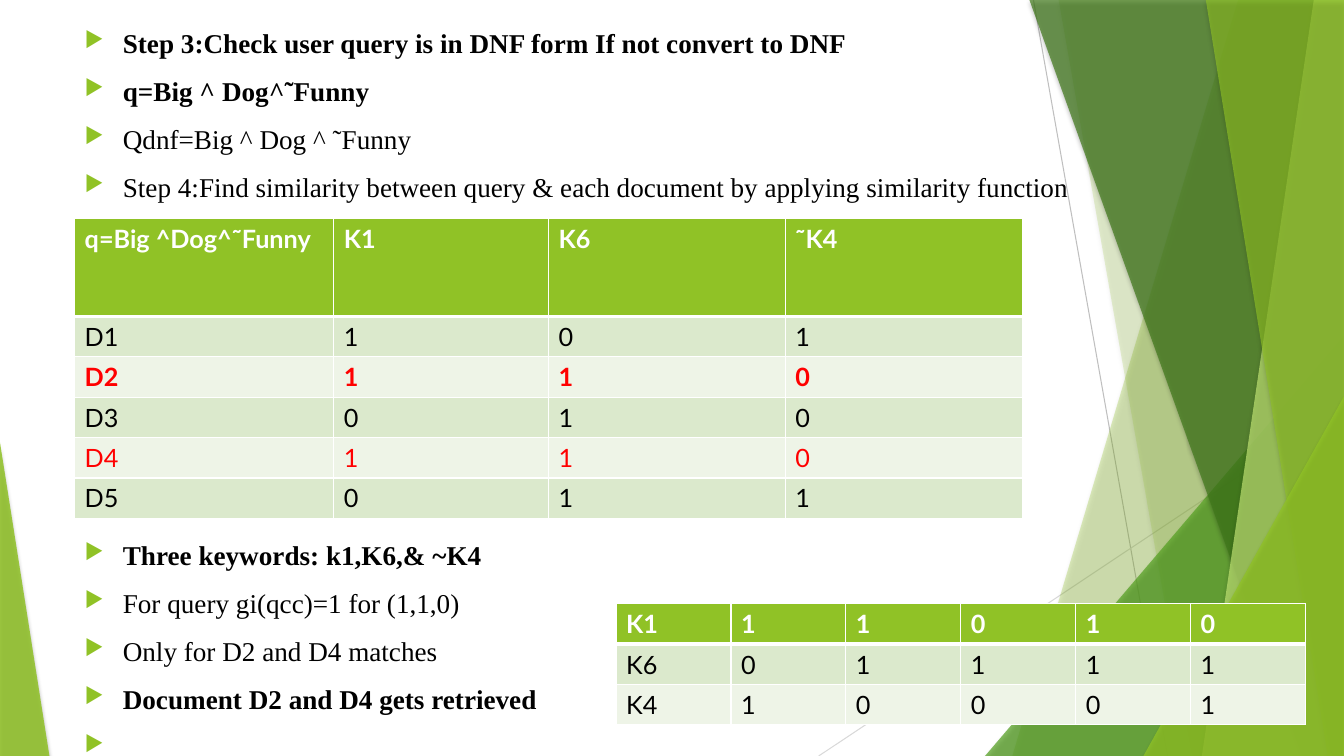
from dataclasses import dataclass

from lxml.etree import SubElement
from pptx import Presentation
from pptx.dml.color import RGBColor as Color
from pptx.enum.shapes import MSO_CONNECTOR as Connector, MSO_SHAPE as Preset
from pptx.oxml import parse_xml
from pptx.oxml.ns import nsdecls, qn
from pptx.util import Inches, Pt


@dataclass(frozen=True)
class Theme:
    lime: str = "90C226"
    green: str = "54A021"
    forest: str = "3F7819"
    pale: str = "C0E474"
    band_dark: str = "DBE9CC"
    band_light: str = "EEF4E7"
    white: str = "FFFFFF"
    black: str = "000000"
    red: str = "FF0000"
    ray_dark: str = "BFBFBF"
    ray_light: str = "D9D9D9"
    body_font: str = "Times New Roman"
    table_font: str = "Lato"
    body_size: float = 19.4
    table_size: float = 18
    body_gap: float = 11
    ray_width: float = 0.75
    grid_width: float = 0.96
    header_rule: float = 3


THEME = Theme()
WIDTH, HEIGHT = 13.33, 7.5
ROW_HEIGHT = 0.4

RAYS = [
    (10.25, 0, 11.58, 7.5, THEME.ray_dark),
    (13.33, 4.03, 8.12, 7.5, THEME.ray_light),
]
FACETS_BEHIND = [(12.28, 10.04, THEME.lime, 30), (10.5, 11.82, THEME.lime, 20)]
FACETS_FRONT = [
    (10.21, 12.91, THEME.forest, 70),
    (13.03, 11.92, THEME.pale, 70),
    (11.96, 13.17, THEME.lime, 65),
]
CORNER_BEHIND = (9.77, 3.33, 3.56, 4.17, 1, THEME.green, 72)
CORNERS_FRONT = [
    (11.34, 3.93, 1.99, 3.57, 1, THEME.lime, 80),
    (0, 4.39, 0.49, 3.11, 0, THEME.lime, 85),
]

QUERY_STEPS = [
    ("Step 3:Check user query is in DNF form If not convert to DNF", True),
    ("q=Big ^ Dog^˜Funny", True),
    ("Qdnf=Big ^ Dog ^ ˜Funny", False),
    ("Step 4:Find similarity between query & each document by applying similarity function", False),
]
FINDINGS = [
    ("Three keywords: k1,K6,& ~K4", True),
    ("For query gi(qcc)=1 for (1,1,0)", False),
    ("Only for D2 and D4 matches", False),
    ("Document D2 and D4 gets retrieved", True),
    (" ", True),
]
MATCHES = [
    ["q=Big ^Dog^˜Funny", "K1", "K6", "˜K4"],
    ["D1", "1", "0", "1"],
    ["D2", "1", "1", "0"],
    ["D3", "0", "1", "0"],
    ["D4", "1", "1", "0"],
    ["D5", "0", "1", "1"],
]
MATCH_STYLES = {2: (THEME.red, True), 4: (THEME.red, False)}
KEYWORDS = [
    ["K1", "1", "1", "0", "1", "0"],
    ["K6", "0", "1", "1", "1", "1"],
    ["K4", "1", "0", "0", "0", "1"],
]


def assign(target, values):
    for name, value in values.items():
        setattr(target, name, value)


def style_font(font, name, size, color, bold):
    assign(font, {"name": name, "size": Pt(size), "bold": bold})
    font.color.rgb = Color.from_string(color)


def tint(shape, color, opacity):
    shape.fill.solid()
    shape.fill.fore_color.rgb = Color.from_string(color)
    shape.line.fill.background()
    shape.shadow.inherit = False
    properties = shape.element.spPr
    shade = properties.find(qn("a:solidFill"))[0]
    SubElement(shade, qn("a:alpha"), val=str(opacity * 1000))
    properties.find(qn("a:effectLst")).append(parse_xml(
        f'<a:outerShdw {nsdecls("a")} blurRad="{Pt(3)}" dist="{Pt(2)}" dir="5400000" '
        f'rotWithShape="0"><a:srgbClr val="{THEME.black}"><a:alpha val="35000"/>'
        '</a:srgbClr></a:outerShdw>'))


def add_facet(page, box, facet):
    left, top, width, height = box
    top_x, bottom_x, color, opacity = facet
    right, bottom = left + width, top + height
    outline = page.shapes.build_freeform(Inches(left + top_x), Inches(top))
    corners = [(right, top), (right, bottom), (left + bottom_x, bottom)]
    outline.add_line_segments([(Inches(x), Inches(y)) for x, y in corners])
    tint(outline.convert_to_shape(), color, opacity)


def add_corner(page, box, corner):
    x, y, width, height, apex, color, opacity = corner
    place = (box[0] + x, box[1] + y, width, height)
    triangle = page.shapes.add_shape(Preset.ISOSCELES_TRIANGLE, *map(Inches, place))
    triangle.adjustments[0] = apex
    tint(triangle, color, opacity)


def add_backdrop(page, box):
    left, top = box[:2]
    for x1, y1, x2, y2, color in RAYS:
        ends = (left + x1, top + y1, left + x2, top + y2)
        ray = page.shapes.add_connector(Connector.STRAIGHT, *map(Inches, ends))
        ray.line.width = Pt(THEME.ray_width)
        ray.line.color.rgb = Color.from_string(color)
        SubElement(ray.element.spPr, qn("a:effectLst"))
    for facet in FACETS_BEHIND:
        add_facet(page, box, facet)
    add_corner(page, box, CORNER_BEHIND)
    for facet in FACETS_FRONT:
        add_facet(page, box, facet)
    for corner in CORNERS_FRONT:
        add_corner(page, box, corner)


def add_bullets(page, box, items):
    frame = page.shapes.add_textbox(*map(Inches, box)).text_frame
    frame.word_wrap = True
    for index, (text, bold) in enumerate(items):
        para = frame.paragraphs[0] if index == 0 else frame.add_paragraph()
        para.space_before = Pt(THEME.body_gap if index else 0)
        properties = para._p.get_or_add_pPr()
        properties.set("marL", str(Inches(0.38)))
        properties.set("indent", str(Inches(-0.38)))
        bullet_color = SubElement(properties, qn("a:buClr"))
        SubElement(bullet_color, qn("a:srgbClr"), val=THEME.lime)
        SubElement(properties, qn("a:buSzPct"), val="80000")
        SubElement(properties, qn("a:buChar"), char="▶")
        span = para.add_run()
        span.text = text
        style_font(span.font, THEME.body_font, THEME.body_size, THEME.black, bold)


def add_borders(cell, row):
    heavy_side = {0: "B", 1: "T"}.get(row)
    properties = cell._tc.get_or_add_tcPr()
    for side in "LRTB":
        width = THEME.header_rule if side == heavy_side else THEME.grid_width
        edge = SubElement(properties, qn(f"a:ln{side}"), w=str(Pt(width)))
        fill = SubElement(edge, qn("a:solidFill"))
        SubElement(fill, qn("a:srgbClr"), val=THEME.white)


def add_grid(page, box, rows, widths, header_height, styles):
    heights = [header_height] + [ROW_HEIGHT] * (len(rows) - 1)
    grid = page.shapes.add_table(len(rows), len(widths), *map(Inches, box)).table
    assign(grid, {"first_row": False, "horz_banding": False})
    for column, width in zip(grid.columns, widths):
        column.width = Inches(width)
    for row, (values, height) in enumerate(zip(rows, heights)):
        grid.rows[row].height = Inches(height)
        band = THEME.band_dark if row % 2 else THEME.band_light
        color, bold = styles.get(row, (THEME.black, False))
        if row == 0:
            band, color, bold = THEME.lime, THEME.white, True
        for column, value in enumerate(values):
            cell = grid.cell(row, column)
            add_borders(cell, row)
            cell.fill.solid()
            cell.fill.fore_color.rgb = Color.from_string(band)
            span = cell.text_frame.paragraphs[0].add_run()
            span.text = value
            style_font(span.font, THEME.table_font, THEME.table_size, color, bold)


def main():
    deck = Presentation()
    assign(deck, {"slide_width": Inches(WIDTH), "slide_height": Inches(HEIGHT)})
    page = deck.slides.add_slide(deck.slide_layouts[6])
    add_backdrop(page, (0, 0, WIDTH, HEIGHT))
    add_bullets(page, (0.74, 0.21, 9.98, 1.9), QUERY_STEPS)
    add_bullets(page, (0.74, 5.29, 5.3, 2.21), FINDINGS)
    add_grid(page, (0.74, 2.17, 9.4, 2.97), MATCHES,
             [2.57, 2.13, 2.35, 2.35], 0.97, MATCH_STYLES)
    add_grid(page, (6.11, 5.99, 6.84, 1.2), KEYWORDS, [1.14] * 6, ROW_HEIGHT, {})
    deck.save("out.pptx")


if __name__ == "__main__":
    main()
